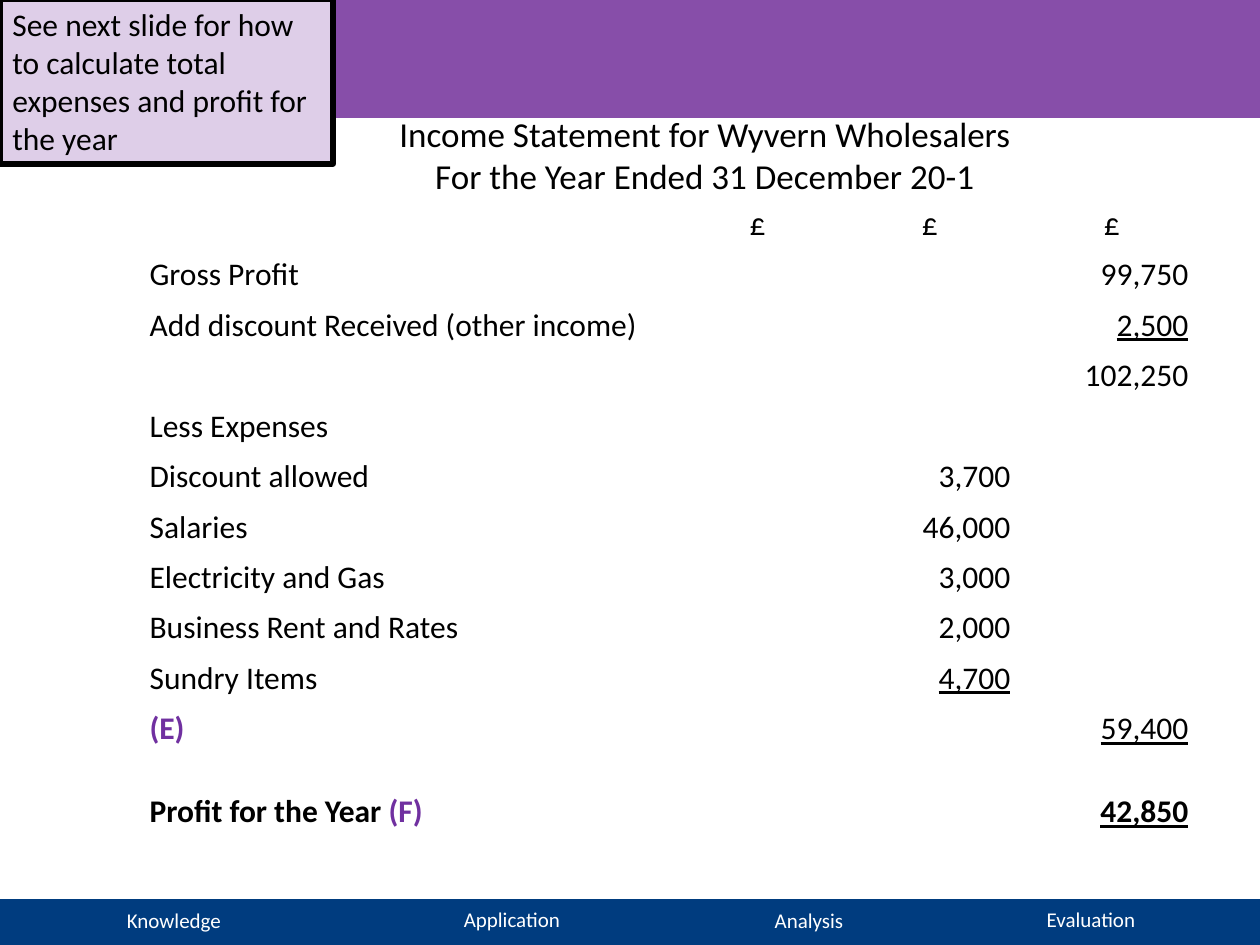
import pptx
import pptx.util
import pptx.dml.color
import pptx.enum.shapes
import pptx.enum.text

# Content
TITLE = "Income Statement for Wyvern Wholesalers\vFor the Year Ended 31 December 20-1"
NOTE = "See next slide for how to calculate total expenses and profit for the year"
SKILLS = [("Knowledge", 5, 901), ("Application", 343, 900),
          ("Analysis", 640, 901), ("Evaluation", 922, 900)]  # text, left, top

BOLD = {"bold": True}
LINED = {"underline": True}
MARK = {"bold": True, "color": "mark"}

# Each entry: row, column, alignment, runs of (text, format)
def item(row, *runs):
    return row, 0, "left", runs

def sum_at(row, col, text, **form):
    return row, col, "right", [(text, form)]

ENTRIES = [(0, col, "mid", [("£", {})]) for col in (1, 2, 3)] + [
    item(1, ("Gross Profit", {})), sum_at(1, 3, "99,750"),
    item(2, ("Add discount Received (other income)", {})), sum_at(2, 3, "2,500", **LINED),
    sum_at(3, 3, "102,250"),
    item(4, ("Less Expenses", {})),
    item(5, ("Discount allowed", {})), sum_at(5, 2, "3,700"),
    item(6, ("Salaries", {})), sum_at(6, 2, "46,000"),
    item(7, ("Electricity and Gas", {})), sum_at(7, 2, "3,000"),
    item(8, ("Business Rent and Rates", {})), sum_at(8, 2, "2,000"),
    item(9, ("Sundry Items", {})), sum_at(9, 2, "4,700", **LINED),
    item(10, ("(E)", MARK)), sum_at(10, 3, "59,400", **LINED),
    item(11, ("Profit for the Year ", BOLD), ("(F)", MARK)),
    sum_at(11, 3, "42,850", **BOLD, **LINED),
]
COLS = [541, 159, 186, 178]
ROWS = [48] * 10 + [83] + [48] * 2

# Theme
THEME = {
    "font": "Calibri",
    "color": {"ink": "000000", "mark": "7030A0", "head": "874EA9",
              "foot": "003C7F", "note": "DECEE8", "white": "FFFFFF"},
    "size": {"title": 20, "body": 18, "foot": 12},
}
ALIGN = {"left": pptx.enum.text.PP_ALIGN.LEFT,
         "mid": pptx.enum.text.PP_ALIGN.CENTER,
         "right": pptx.enum.text.PP_ALIGN.RIGHT}
SCALE = 914400 / 126


def px(num):
    return pptx.util.Emu(round(num * SCALE))


def shade(name):
    return pptx.dml.color.RGBColor.from_string(THEME["color"][name])


def write(frame, runs, align="left", size="body"):
    para = frame.paragraphs[0]
    para.alignment = ALIGN[align]
    for text, form in runs:
        form = {"color": "ink", **form}
        tint = form.pop("color")
        for index, part in enumerate(text.split("\v")):
            if index:
                para.add_line_break()
            run = para.add_run()
            run.text = part
            run.font.color.rgb = shade(tint)
            looks = {"name": THEME["font"],
                     "size": pptx.util.Pt(THEME["size"][size]), **form}
            for key, val in looks.items():
                setattr(run.font, key, val)


def box(slide, place, fill, edge=None, width=0):
    shape = slide.shapes.add_shape(
        pptx.enum.shapes.MSO_SHAPE.RECTANGLE, *map(px, place))
    shape.shadow.inherit = False
    shape.fill.solid()
    shape.fill.fore_color.rgb = shade(fill)
    if edge:
        shape.line.color.rgb = shade(edge)
        shape.line.width = pptx.util.Pt(width)
    else:
        shape.line.fill.background()
    return shape


def label(slide, place, runs, size):
    frame = slide.shapes.add_textbox(*map(px, place)).text_frame
    frame.word_wrap = True
    write(frame, runs, "mid", size)


def main():
    deck = pptx.Presentation()
    deck.slide_width, deck.slide_height = px(1260), px(945)
    slide = deck.slides.add_slide(deck.slide_layouts[6])

    # Header and footer bands
    box(slide, (0, 0, 1260, 116), "head", "head", 2)
    box(slide, (0, 899, 1260, 46), "foot")
    for text, left, top in SKILLS:
        label(slide, (left, top, 338, 38), [(text, {"color": "white"})], "foot")

    # Title
    label(slide, (213, 106, 984, 89), [(TITLE, {})], "title")

    # Income statement
    table = slide.shapes.add_table(
        len(ROWS), len(COLS),
        *map(px, (137, 199, sum(COLS), sum(ROWS)))).table
    table.first_row = table.horz_banding = False
    for col, width in zip(table.columns, COLS):
        col.width = px(width)
    for row, height in zip(table.rows, ROWS):
        row.height = px(height)
    for cell in table.iter_cells():
        cell.fill.background()
    for row, col, align, runs in ENTRIES:
        write(table.cell(row, col).text_frame, runs, align)

    # Corner note
    note = box(slide, (0, -1, 333, 165), "note", "ink", 3).text_frame
    note.word_wrap = True
    note.vertical_anchor = pptx.enum.text.MSO_ANCHOR.TOP
    write(note, [(NOTE, {})])

    deck.save("out.pptx")


if __name__ == "__main__":
    main()
